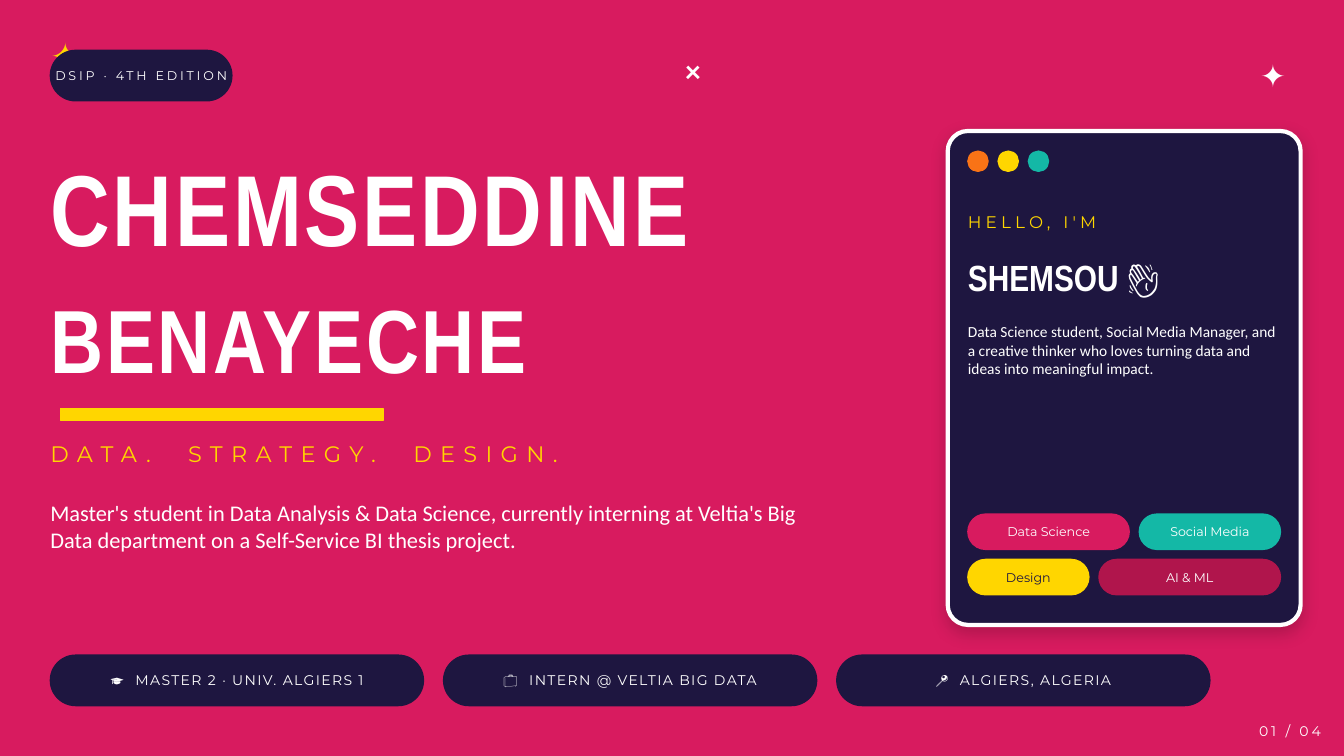
import dataclasses
import itertools

import lxml.etree
import pptx
import pptx.dml.color
import pptx.enum.shapes
import pptx.enum.text
import pptx.oxml.ns
import pptx.util

SHAPE = pptx.enum.shapes.MSO_SHAPE
ALIGN = pptx.enum.text.PP_ALIGN
ANCHOR = pptx.enum.text.MSO_ANCHOR


@dataclasses.dataclass(frozen=True)
class Theme:
    pink: str = "D81B5F"
    crimson: str = "B0154C"
    navy: str = "1E1640"
    yellow: str = "FFD600"
    teal: str = "14B8A6"
    orange: str = "F97316"
    white: str = "FFFFFF"
    shade: str = "000000"
    display: str = "Arial Narrow"
    label: str = "Montserrat"
    body: str = "Calibri"
    first_name: int = 72
    last_name: int = 64
    greeting: int = 26
    sparkle: int = 22
    lead: int = 16
    hello: int = 12
    note: int = 11
    caption: int = 10
    tag: int = 9


def color(value):
    return pptx.dml.color.RGBColor.from_string(value)


def grid(steps):
    return pptx.util.Inches(steps / 10)


def write_text(frame, text, *, size, font, ink, bold=False, tracking=0,
               gap=0, align=ALIGN.LEFT, anchor=ANCHOR.MIDDLE, inset=0, wrap=True):
    frame.word_wrap = wrap
    frame.vertical_anchor = anchor
    frame.margin_left = frame.margin_right = grid(inset)
    frame.margin_top = frame.margin_bottom = grid(inset / 2)
    para = frame.paragraphs[0]
    para.alignment = align
    pieces = []
    for part in text.split("|"):
        pieces += [(" ", gap), (part, tracking)]
    for words, spacing in pieces[1:]:
        span = para.add_run()
        span.text = words
        span.font.size = pptx.util.Pt(size)
        span.font.name = font
        span.font.bold = bold
        span.font.color.rgb = color(ink)
        if spacing:
            span._r.get_or_add_rPr().set("spc", str(round(spacing * 100)))


class Page:
    def __init__(self, deck, theme):
        self.theme = theme
        self.slide = deck.slides.add_slide(deck.slide_layouts[6])
        self.slide.background.fill.solid()
        self.slide.background.fill.fore_color.rgb = color(theme.pink)

    def text(self, column, row, columns, rows, text, **style):
        box = self.slide.shapes.add_textbox(*map(grid, (column, row, columns, rows)))
        write_text(box.text_frame, text, **{"ink": self.theme.white, **style})

    def shape(self, kind, column, row, columns, rows, fill, line=None, weight=1):
        shape = self.slide.shapes.add_shape(kind, *map(grid, (column, row, columns, rows)))
        shape.shadow.inherit = False
        shape.fill.solid()
        shape.fill.fore_color.rgb = color(fill)
        shape.line.color.rgb = color(line or fill)
        shape.line.width = pptx.util.Pt(weight)
        return shape

    def pill(self, column, row, columns, rows, text, fill, **style):
        pill = self.shape(SHAPE.ROUNDED_RECTANGLE, column, row, columns, rows, fill)
        pill.adjustments[0] = 0.5
        style = {"font": self.theme.label, "ink": self.theme.white, **style}
        write_text(pill.text_frame, text, align=ALIGN.CENTER, wrap=False, **style)

    def card(self, column, row, columns, rows):
        card = self.shape(SHAPE.ROUNDED_RECTANGLE, column, row, columns, rows,
                          self.theme.navy, self.theme.white, 3)
        card.adjustments[0] = 0.057
        name = pptx.oxml.ns.qn
        effects = card._element.spPr.find(name("a:effectLst"))
        shadow = lxml.etree.SubElement(
            effects, name("a:outerShdw"), blurRad=str(pptx.util.Pt(12)),
            dist=str(pptx.util.Pt(4)), dir="5400000", algn="bl", rotWithShape="0")
        shade = lxml.etree.SubElement(shadow, name("a:srgbClr"), val=self.theme.shade)
        lxml.etree.SubElement(shade, name("a:alpha"), val="18000")


def draw_intro(page, theme):
    sparkle = dict(font=theme.body, bold=True, inset=1)
    page.text(4, 3, 5, 5, "✦", size=theme.greeting, ink=theme.yellow, **sparkle)
    page.text(124, 5, 5, 5, "✦", size=theme.sparkle, **sparkle)
    page.text(67, 5, 4, 4, "×", size=theme.sparkle, **sparkle)
    page.pill(5, 5, 18, 5, "DSIP · 4TH EDITION", theme.navy, size=theme.tag, tracking=2)

    name = dict(font=theme.display, bold=True, tracking=2)
    page.text(5, 13, 85, 15, "CHEMSEDDINE", size=theme.first_name, **name)
    page.text(5, 27, 85, 13, "BENAYECHE", size=theme.last_name, **name)
    page.shape(SHAPE.RECTANGLE, 6, 40.5, 32, 1.2, theme.yellow)
    page.text(5, 42.5, 80, 5, "DATA.|STRATEGY.|DESIGN.", size=theme.lead,
              font=theme.label, ink=theme.yellow, tracking=6, gap=16.2)
    page.text(5, 49.5, 78, 13,
              "Master's student in Data Analysis & Data Science, currently interning at "
              "Veltia's Big Data department on a Self-Service BI thesis project.",
              size=theme.lead, font=theme.body, anchor=ANCHOR.TOP)

    facts = ("🎓|MASTER 2 · UNIV. ALGIERS 1", "💼|INTERN @ VELTIA BIG DATA",
             "📍|ALGIERS, ALGERIA")
    for index, fact in enumerate(facts):
        page.pill(5 + 39 * index, 65, 37, 5, fact, theme.navy,
                  size=theme.caption, tracking=1, gap=4.6)


def draw_profile(page, theme):
    left, width, gap = 96, 31, 1
    page.card(94, 13, 35, 49)
    for index, fill in enumerate((theme.orange, theme.yellow, theme.teal)):
        page.shape(SHAPE.OVAL, left + 3 * index, 15, 2, 2, fill)
    page.text(left, 20, width, 4, "HELLO, I'M", size=theme.hello,
              font=theme.label, ink=theme.yellow, tracking=3)
    page.text(left, 24, width, 7, "SHEMSOU 👋", size=theme.greeting,
              font=theme.display, bold=True)
    page.text(left, 32, width, 18,
              "Data Science student, Social Media Manager, and a creative thinker "
              "who loves turning data and ideas into meaningful impact.",
              size=theme.note, font=theme.body, anchor=ANCHOR.TOP)

    tag_rows = (
        (("Data Science", 16, theme.pink, theme.white),
         ("Social Media", 14, theme.teal, theme.white)),
        (("Design", 12, theme.yellow, theme.navy),
         ("AI & ML", 18, theme.crimson, theme.white)),
    )
    for index, tags in enumerate(tag_rows):
        starts = itertools.accumulate((tag[1] + gap for tag in tags), initial=left)
        for column, (label, columns, fill, ink) in zip(starts, tags):
            page.pill(column, 51 + 4.5 * index, columns, 3.5, label, fill,
                      ink=ink, size=theme.tag)
    page.text(122, 71, 9, 3, "01 / 04", size=theme.caption, font=theme.label,
              tracking=2, align=ALIGN.RIGHT)


def main():
    theme = Theme()
    deck = pptx.Presentation()
    deck.slide_width = pptx.util.Inches(13.33)
    deck.slide_height = pptx.util.Inches(7.5)
    page = Page(deck, theme)
    draw_intro(page, theme)
    draw_profile(page, theme)
    deck.save("out.pptx")


if __name__ == "__main__":
    main()
